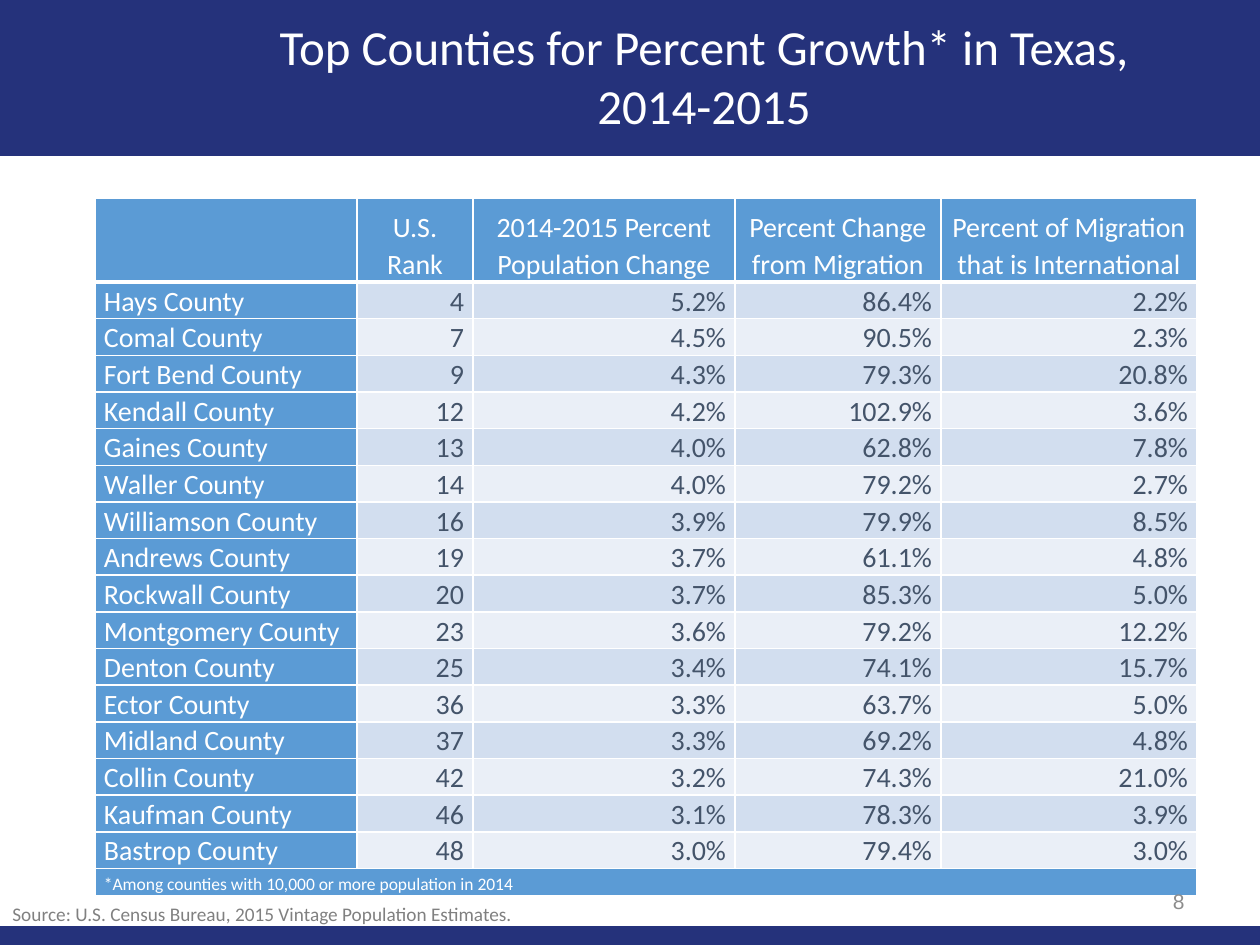
from typing import NamedTuple

from lxml.etree import SubElement
from pptx import Presentation
from pptx.dml.color import RGBColor
from pptx.enum.shapes import MSO_SHAPE
from pptx.enum.text import MSO_ANCHOR, PP_ALIGN
from pptx.oxml.ns import qn
from pptx.util import Emu, Pt

PIXELS_PER_INCH = 126
NAVY = RGBColor(0x25, 0x32, 0x7B)
BLUE = RGBColor(0x5B, 0x9B, 0xD5)
BAND_DARK = RGBColor(0xD2, 0xDE, 0xEF)
BAND_LIGHT = RGBColor(0xEA, 0xEF, 0xF7)
SLATE = RGBColor(0x44, 0x54, 0x6A)
GRAY = RGBColor(0x80, 0x80, 0x80)
NUMBER_GRAY = RGBColor(0x8C, 0x8C, 0x8C)
WHITE = RGBColor(0xFF, 0xFF, 0xFF)


class Area(NamedTuple):
    left: int
    top: int
    width: int
    height: int


class County(NamedTuple):
    name: str
    rank: int
    growth: float
    migration: float
    international: float


HEADINGS = (
    "",
    "U.S. Rank",
    "2014-2015 Percent Population Change",
    "Percent Change from Migration",
    "Percent of Migration that is International",
)
COUNTIES = (
    County("Hays", 4, 5.2, 86.4, 2.2),
    County("Comal", 7, 4.5, 90.5, 2.3),
    County("Fort Bend", 9, 4.3, 79.3, 20.8),
    County("Kendall", 12, 4.2, 102.9, 3.6),
    County("Gaines", 13, 4.0, 62.8, 7.8),
    County("Waller", 14, 4.0, 79.2, 2.7),
    County("Williamson", 16, 3.9, 79.9, 8.5),
    County("Andrews", 19, 3.7, 61.1, 4.8),
    County("Rockwall", 20, 3.7, 85.3, 5.0),
    County("Montgomery", 23, 3.6, 79.2, 12.2),
    County("Denton", 25, 3.4, 74.1, 15.7),
    County("Ector", 36, 3.3, 63.7, 5.0),
    County("Midland", 37, 3.3, 69.2, 4.8),
    County("Collin", 42, 3.2, 74.3, 21.0),
    County("Kaufman", 46, 3.1, 78.3, 3.9),
    County("Bastrop", 48, 3.0, 79.4, 3.0),
)
FOOTNOTE = "*Among counties with 10,000 or more population in 2014"
COLUMN_WIDTHS = (262, 116, 262, 206, 256)
ROW_HEIGHTS = (84, *[36] * len(COUNTIES), 27)
BARS = (Area(0, 0, 1260, 156), Area(0, 926, 1260, 19))


def px(length: int) -> Emu:
    return Emu(round(length * 914400 / PIXELS_PER_INCH))


def scaled(area: Area) -> list[Emu]:
    return [px(length) for length in area]


def write(frame, text: str, *, size: int, color: RGBColor, font: str = "Calibri",
          align=PP_ALIGN.LEFT, spacing: float = 1.0) -> None:
    para = frame.paragraphs[0]
    para.alignment = align
    para.line_spacing = spacing
    span = para.add_run()
    span.text = text
    span.font.name = font
    span.font.size = Pt(size)
    span.font.color.rgb = color


def add_bar(page, area: Area) -> None:
    bar = page.shapes.add_shape(MSO_SHAPE.RECTANGLE, *scaled(area))
    bar.shadow.inherit = False
    bar.fill.solid()
    bar.fill.fore_color.rgb = NAVY
    bar.line.fill.background()
    page.shapes.title.element.addprevious(bar.element)


def add_text(page, area: Area, text: str, *, wrap: bool = True,
             anchor=MSO_ANCHOR.TOP, **style) -> None:
    box = page.shapes.add_textbox(*scaled(area))
    box.text_frame.word_wrap = wrap
    box.text_frame.vertical_anchor = anchor
    write(box.text_frame, text, **style)


def set_borders(cell, bottom: int) -> None:
    properties = cell._tc.get_or_add_tcPr()
    for side, width in (("L", 1), ("R", 1), ("T", 1), ("B", bottom)):
        line = SubElement(properties, qn(f"a:ln{side}"), w=str(Pt(width)))
        fill = SubElement(line, qn("a:solidFill"))
        SubElement(fill, qn("a:srgbClr"), val=str(WHITE))


def fill_cell(cell, text: str, *, fill: RGBColor, bottom: int = 1,
              size: int = 16, color: RGBColor = WHITE,
              align=PP_ALIGN.LEFT) -> None:
    set_borders(cell, bottom)
    cell.fill.solid()
    cell.fill.fore_color.rgb = fill
    cell.vertical_anchor = MSO_ANCHOR.BOTTOM
    cell.margin_left = cell.margin_right = px(9)
    cell.margin_top = cell.margin_bottom = 0
    if text:
        write(cell.text_frame, text, size=size, color=color, align=align, spacing=1.07)


def add_county_table(page) -> None:
    area = Area(95, 198, sum(COLUMN_WIDTHS), sum(ROW_HEIGHTS))
    table = page.shapes.add_table(
        len(ROW_HEIGHTS), len(COLUMN_WIDTHS), *scaled(area)).table
    for column, width in zip(table.columns, COLUMN_WIDTHS):
        column.width = px(width)
    for row, height in zip(table.rows, ROW_HEIGHTS):
        row.height = px(height)
    for index, heading in enumerate(HEADINGS):
        fill_cell(table.cell(0, index), heading, fill=BLUE, bottom=3,
                  align=PP_ALIGN.CENTER)
    for row, county in enumerate(COUNTIES, start=1):
        fill_cell(table.cell(row, 0), f"{county.name} County", fill=BLUE)
        shares = (county.growth, county.migration, county.international)
        values = (str(county.rank), *(f"{share:.1f}%" for share in shares))
        band = BAND_DARK if row % 2 else BAND_LIGHT
        for index, value in enumerate(values, start=1):
            fill_cell(table.cell(row, index), value, fill=band, color=SLATE,
                      align=PP_ALIGN.RIGHT)
    last = len(ROW_HEIGHTS) - 1
    note = table.cell(last, 0)
    note.merge(table.cell(last, len(COLUMN_WIDTHS) - 1))
    fill_cell(note, FOOTNOTE, fill=BLUE, size=10)


def main() -> None:
    deck = Presentation()
    deck.slide_width, deck.slide_height = px(1260), px(945)
    page = deck.slides.add_slide(deck.slide_layouts[5])
    title = page.shapes.title
    title.left, title.top, title.width, title.height = scaled(Area(242, 10, 924, 131))
    title.text_frame.vertical_anchor = MSO_ANCHOR.MIDDLE
    write(title.text_frame, "Top Counties for Percent Growth* in Texas, 2014-2015",
          size=28, color=WHITE, align=PP_ALIGN.CENTER)
    for area in BARS:
        add_bar(page, area)
    add_county_table(page)
    add_text(page, Area(903, 876, 294, 50), "8", anchor=MSO_ANCHOR.MIDDLE,
             size=12, color=NUMBER_GRAY, font="Arial", align=PP_ALIGN.RIGHT)
    add_text(page, Area(0, 896, 599, 36),
             "Source: U.S. Census Bureau, 2015 Vintage Population Estimates.",
             wrap=False, size=11, color=GRAY)
    deck.save("out.pptx")


if __name__ == "__main__":
    main()
